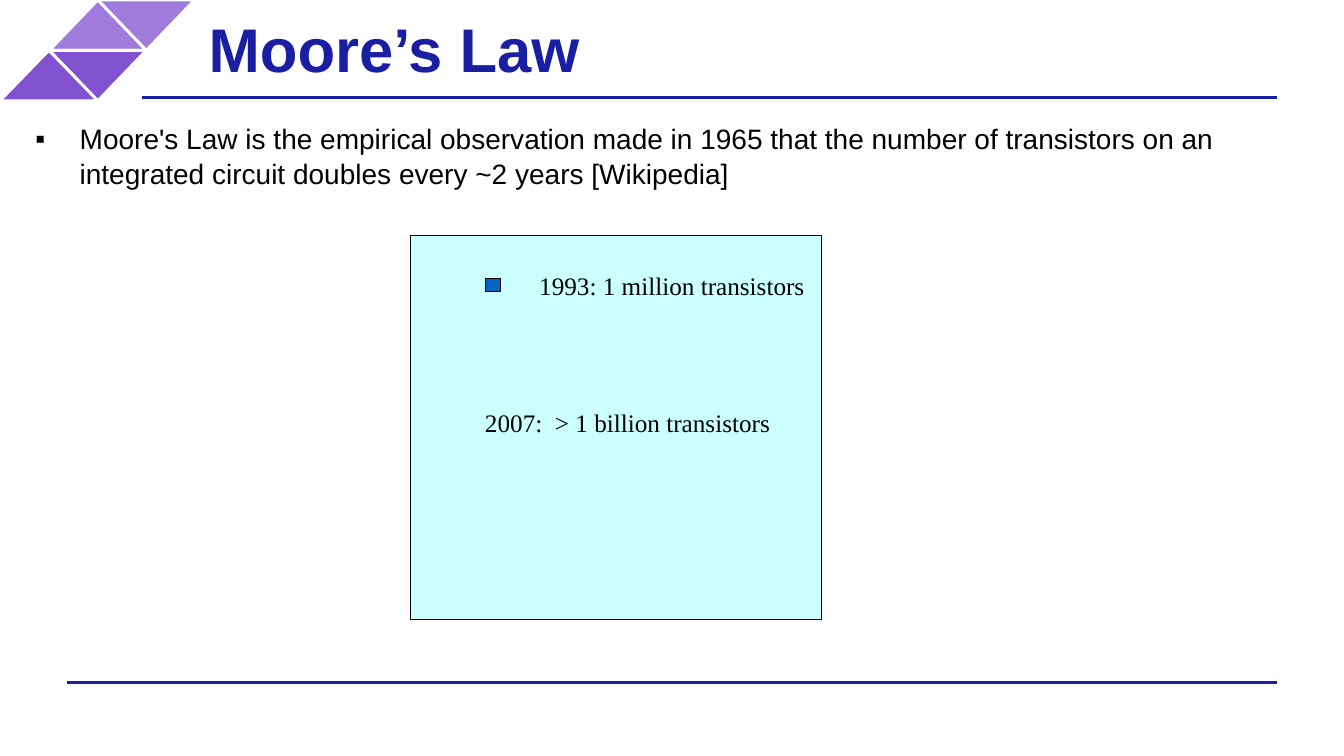
"""Build the Moore's Law slide."""
from lxml.etree import SubElement
from pptx import Presentation
from pptx.dml.color import RGBColor
from pptx.enum.shapes import MSO_CONNECTOR as Connector, MSO_SHAPE as Shape
from pptx.enum.text import MSO_ANCHOR as Anchor, PP_ALIGN as Align
from pptx.oxml.ns import qn
from pptx.util import Inches, Pt

NAVY, BLACK, WHITE = "191EA2", "000000", "FFFFFF"
LILAC, PURPLE = "A07BDB", "8151CF"


def color(value):
    return RGBColor.from_string(value)


def add_text(text, left, top, width, height, size=18, font="Times New Roman", ink=BLACK,
             bold=False, align=Align.LEFT, anchor=Anchor.TOP, inset=0, spacing=None, bullet=None):
    box = page.shapes.add_textbox(Inches(left), Inches(top), Inches(width), Inches(height))
    frame = box.text_frame
    frame.word_wrap = True
    frame.vertical_anchor = anchor
    frame.margin_left = frame.margin_right = Inches(inset)
    frame.margin_top = frame.margin_bottom = Inches(inset)
    para = frame.paragraphs[0]
    para.alignment = align
    para.line_spacing = spacing
    if bullet:
        properties = para._p.get_or_add_pPr()
        properties.set("marL", str(Inches(0.5)))
        properties.set("indent", str(Inches(-0.44)))
        SubElement(properties, qn("a:buFont")).set("typeface", font)
        SubElement(properties, qn("a:buChar")).set("char", bullet)
    span = para.add_run()
    span.text = text
    span.font.name, span.font.size, span.font.bold = font, Pt(size), bold
    span.font.color.rgb = color(ink)


deck = Presentation()
deck.slide_width, deck.slide_height = Inches(13.33), Inches(7.5)
page = deck.slides.add_slide(deck.slide_layouts[6])

shapes = [
    (Shape.ISOSCELES_TRIANGLE, 0.97, 0, 0.96, 0.5, 180, LILAC, WHITE, 2),
    (Shape.ISOSCELES_TRIANGLE, 0.49, 0, 0.96, 0.5, 0, LILAC, WHITE, 2),
    (Shape.ISOSCELES_TRIANGLE, 0.49, 0.5, 0.96, 0.5, 180, PURPLE, WHITE, 2),
    (Shape.ISOSCELES_TRIANGLE, 0, 0.5, 0.97, 0.5, 0, PURPLE, WHITE, 2),
    (Shape.RECTANGLE, 4.07, 2.34, 4.08, 3.81, 0, "CCFFFF", BLACK, 0.75),
    (Shape.RECTANGLE, 4.82, 2.76, 0.14, 0.13, 0, "0365C0", BLACK, 0.75),
]
for kind, left, top, width, height, turn, fill, edge, weight in shapes:
    shape = page.shapes.add_shape(kind, Inches(left), Inches(top), Inches(width), Inches(height))
    shape.shadow.inherit = False
    shape.rotation = turn
    shape.fill.solid()
    shape.fill.fore_color.rgb = color(fill)
    shape.line.color.rgb = color(edge)
    shape.line.width = Pt(weight)

for start, height in [(1.41, 0.97), (0.66, 6.77)]:
    rule = page.shapes.add_connector(Connector.STRAIGHT, Inches(start), Inches(height),
                                     Inches(12.67), Inches(height))
    rule.line.color.rgb = color(NAVY)
    rule.line.width = Pt(2)
    SubElement(rule._element.spPr, qn("a:effectLst"))

add_text("Moore’s Law", 1.93, 0, 10.04, 0.95, size=44, font="Arial", ink=NAVY, bold=True,
         anchor=Anchor.MIDDLE, inset=0.14)
add_text("Moore's Law is the empirical observation made in 1965 that the number of transistors "
         "on an integrated circuit doubles every ~2 years [Wikipedia]",
         0.29, 1.19, 12.75, 5.55, size=20, font="Arial", spacing=1.05, bullet="▪")
add_text("1993: 1 million transistors", 4.65, 2.68, 3.33, 0.41, align=Align.RIGHT)
add_text("2007:  > 1 billion transistors", 4.56, 4.04, 3.33, 0.26, align=Align.CENTER)

deck.save("out.pptx")
